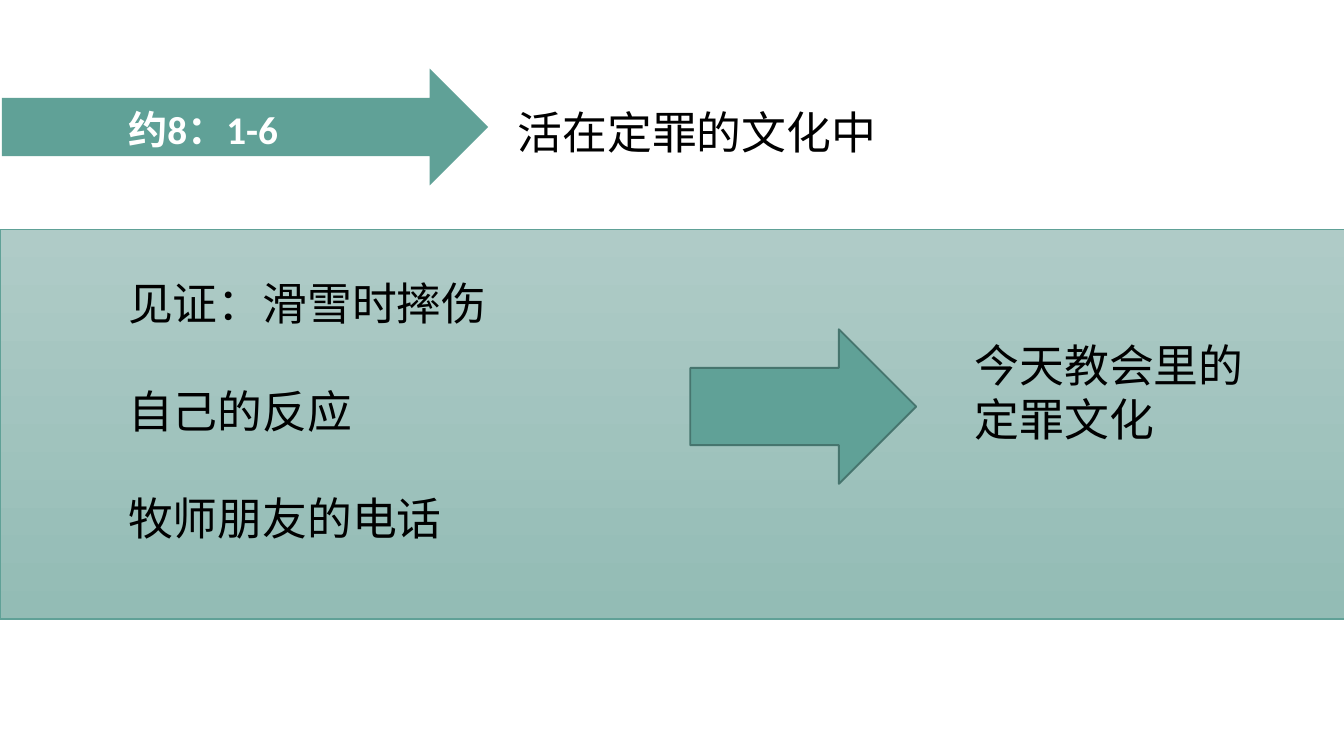
from lxml import etree
from pptx import Presentation
from pptx.dml.color import RGBColor
from pptx.enum.shapes import MSO_SHAPE
from pptx.enum.text import MSO_ANCHOR, MSO_AUTO_SIZE, PP_ALIGN
from pptx.oxml.ns import qn
from pptx.util import Pt

ARROW = MSO_SHAPE.RIGHT_ARROW
RECTANGLE = MSO_SHAPE.RECTANGLE
TOP = MSO_ANCHOR.TOP
FIXED = MSO_AUTO_SIZE.NONE
LEFT = PP_ALIGN.LEFT
JUSTIFY = PP_ALIGN.JUSTIFY

COLORS = {
    "teal": "60A197",
    "teal_dark": "46756E",
    "band_top": "AFCBC7",
    "band_bottom": "93BCB5",
    "white": "FFFFFF",
    "black": "000000",
}


def color(name):
    """Return the named colour."""
    return RGBColor.from_string(COLORS[name])


def write_text(shape, lines, font="Noto Sans CJK SC", size=24, fill="black",
               bold=False, align=LEFT, gap=0):
    """Fill a shape with one formatted paragraph per line."""
    frame = shape.text_frame
    frame.word_wrap = True
    frame.auto_size = FIXED
    frame.vertical_anchor = TOP
    frame.margin_left = frame.margin_right = Pt(5.2)
    frame.margin_top = Pt(4.5)
    frame.margin_bottom = Pt(2.6)
    for index, line in enumerate(lines):
        paragraph = frame.paragraphs[0] if index == 0 else frame.add_paragraph()
        paragraph.alignment = align
        paragraph.line_spacing = Pt(size * 1.2)
        paragraph.space_before = Pt(gap if index else 0)
        paragraph.space_after = Pt(0)
        properties = paragraph._p.get_or_add_pPr()
        properties.set("marL", "0")
        properties.set("indent", "0")
        etree.SubElement(properties, qn("a:buNone"))
        run = paragraph.add_run()
        run.text = line
        run.font.size = Pt(size)
        run.font.bold = bold
        run.font.name = font
        run.font.color.rgb = color(fill)
        east_asian = etree.SubElement(run._r.get_or_add_rPr(), qn("a:ea"))
        east_asian.set("typeface", font)


class SlideBuilder:
    """Hold the style and the current slide."""

    def __init__(self, presentation):
        """Add a title and content slide."""
        self.slide = presentation.slides.add_slide(presentation.slide_layouts[1])

    def add_shape(self, kind, box, fill=None, gradient=None, line=None, width=1):
        """Draw a preset shape with a solid or vertical gradient fill."""
        shape = self.slide.shapes.add_shape(kind, *map(Pt, box))
        shape.shadow.inherit = False
        if gradient:
            shape.fill.gradient()
            shape.fill.gradient_angle = 270
            for stop, name, position in zip(shape.fill.gradient_stops, gradient, (0, 1)):
                stop.color.rgb = color(name)
                stop.position = position
        else:
            shape.fill.solid()
            shape.fill.fore_color.rgb = color(fill)
        if line:
            shape.line.color.rgb = color(line)
            shape.line.width = Pt(width)
        else:
            shape.line.fill.background()

    def add_text(self, box, lines, **style):
        """Add a text box."""
        write_text(self.slide.shapes.add_textbox(*map(Pt, box)), lines, **style)

    def fill_placeholder(self, index, box, lines, **style):
        """Move a placeholder to the front and fill it."""
        shape = self.slide.placeholders[index]
        shape.left, shape.top, shape.width, shape.height = map(Pt, box)
        shape.element.getparent().append(shape.element)
        write_text(shape, lines, **style)


def main():
    """Build and save the slide."""
    presentation = Presentation()
    presentation.slide_width = Pt(720)
    presentation.slide_height = Pt(405)
    builder = SlideBuilder(presentation)

    builder.add_shape(ARROW, (1, 36.8, 260.5, 62.6), fill="teal")
    builder.add_text((63.4, 51.8, 111.6, 31), ["约8：1-6"],
                     font="Calibri", size=21, fill="white", bold=True)
    builder.fill_placeholder(0, (272.2, 51.8, 317.5, 34.6), ["活在定罪的文化中"],
                             align=JUSTIFY)

    builder.add_shape(RECTANGLE, (0, 123, 721.4, 208.6),
                      gradient=("band_top", "band_bottom"), line="teal", width=0.75)
    builder.fill_placeholder(1, (63.4, 143.3, 265, 163.4),
                             ["见证：滑雪时摔伤", "自己的反应", "牧师朋友的电话"], gap=28.8)
    builder.add_shape(ARROW, (369.8, 176.4, 121, 82.8), fill="teal", line="teal_dark")
    builder.add_text((517, 176.4, 172, 63.4), ["今天教会里的", "定罪文化"])

    presentation.save("out.pptx")


if __name__ == "__main__":
    main()
